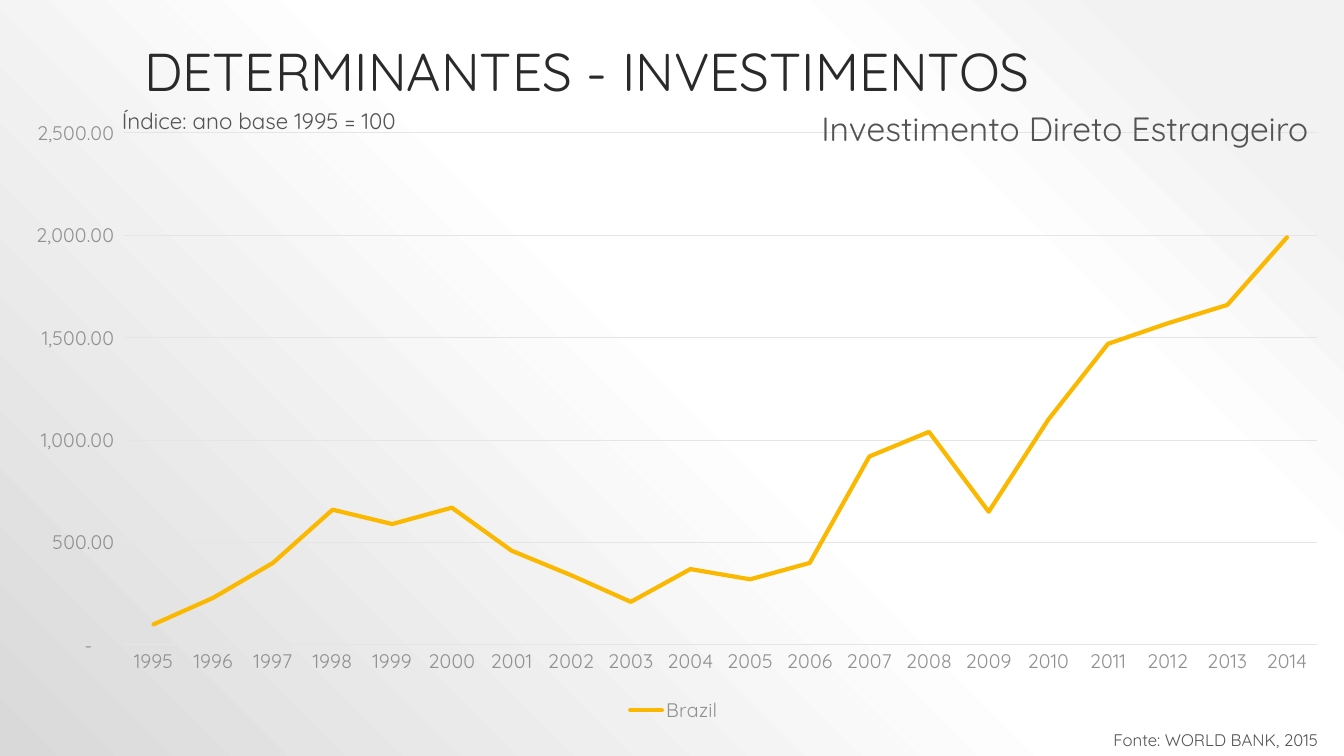
"""Builds the slide on foreign direct investment in Brazil."""
from lxml.etree import SubElement
from pptx import Presentation
from pptx.chart.data import CategoryChartData
from pptx.dml.color import RGBColor
from pptx.enum.chart import XL_CHART_TYPE, XL_LEGEND_POSITION, XL_MARKER_STYLE, XL_TICK_MARK
from pptx.enum.text import MSO_ANCHOR, MSO_AUTO_SIZE, PP_ALIGN
from pptx.oxml.ns import qn
from pptx.util import Cm, Pt

INK = RGBColor(0x2A, 0x2A, 0x2A)
TEXT = RGBColor(0x54, 0x54, 0x54)
AXIS = RGBColor(0x90, 0x90, 0x90)
GRID = RGBColor(0xE5, 0xE5, 0xE5)
GOLD = RGBColor(0xFA, 0xB9, 0x00)
PALE = RGBColor(0xF2, 0xF2, 0xF2)
WHITE = RGBColor(0xFF, 0xFF, 0xFF)
SILVER = RGBColor(0xD9, 0xD9, 0xD9)

FIRST_YEAR = 1995
INVESTMENT = [100, 230, 400, 660, 590, 670, 460, 340, 210, 370,
              320, 400, 920, 1040, 650, 1100, 1470, 1570, 1660, 1990]
NUMBER_FORMAT = r'_(* #,##0.00_);_(* \(#,##0.00\);_(* "-"??_);_(@_)'


class SlideBuilder:
    FONT = "Quicksand"

    def __init__(self, slide):
        self.slide = slide

    def style(self, font, size, color):
        font.name = self.FONT
        font.size = Pt(size)
        font.color.rgb = color

    def background(self, stops):
        self.slide.background.fill.gradient()
        gradient = self.slide.element.find(".//" + qn("a:gradFill"))
        for child in list(gradient):
            gradient.remove(child)
        stop_list = SubElement(gradient, qn("a:gsLst"))
        for position, color in stops:
            stop = SubElement(stop_list, qn("a:gs"), pos=str(position * 1000))
            SubElement(stop, qn("a:srgbClr"), val=str(color))
        circle = SubElement(gradient, qn("a:path"), path="circle")
        SubElement(circle, qn("a:fillToRect"), l="100000", b="100000")

    def fill_text(self, frame, text, size, color):
        frame.text = text
        paragraph = frame.paragraphs[0]
        paragraph.alignment = PP_ALIGN.LEFT
        paragraph.line_spacing = 0.9
        self.style(paragraph.font, size, color)

    def title(self, text, left, top, width, height):
        title = self.slide.shapes.title
        title.left, title.top, title.width, title.height = left, top, width, height
        frame = title.text_frame
        frame.auto_size = MSO_AUTO_SIZE.NONE
        frame.vertical_anchor = MSO_ANCHOR.BOTTOM
        self.fill_text(frame, text, 38, INK)

    def label(self, text, size, left, top, width, height, wrap=False):
        frame = self.slide.shapes.add_textbox(left, top, width, height).text_frame
        frame.word_wrap = wrap
        frame.auto_size = MSO_AUTO_SIZE.SHAPE_TO_FIT_TEXT
        self.fill_text(frame, text, size, TEXT)

    def axis(self, axis):
        axis.major_tick_mark = axis.minor_tick_mark = XL_TICK_MARK.NONE
        self.style(axis.tick_labels.font, 14, AXIS)

    def rule(self, line):
        line.color.rgb = GRID
        line.width = Pt(0.75)

    def line_chart(self, name, categories, values, left, top, width, height):
        data = CategoryChartData(number_format=NUMBER_FORMAT)
        data.categories = categories
        data.add_series(name, values)
        frame = self.slide.shapes.add_chart(
            XL_CHART_TYPE.LINE, left, top, width, height, data)
        self.slide.shapes.title.element.addprevious(frame.element)
        chart = frame.chart
        chart.has_title = False
        self.style(chart.font, 14, TEXT)
        chart.has_legend = True
        chart.legend.position = XL_LEGEND_POSITION.BOTTOM
        chart.legend.include_in_layout = False
        self.style(chart.legend.font, 14, AXIS)

        years, index = chart.category_axis, chart.value_axis
        self.axis(years)
        self.rule(years.format.line)
        self.axis(index)
        index.minimum_scale, index.maximum_scale, index.major_unit = 0, 2500, 500
        index.format.line.fill.background()
        self.rule(index.major_gridlines.format.line)
        index.tick_labels.number_format = NUMBER_FORMAT
        index.tick_labels.number_format_is_linked = False

        plot = chart.plots[0]
        plot.vary_by_categories = False
        series = plot.series[0]
        series.smooth = False
        series.marker.style = XL_MARKER_STYLE.NONE
        series.format.line.color.rgb = GOLD
        series.format.line.width = Pt(3)
        series._element.find(".//" + qn("a:ln")).set("cap", "rnd")


def main():
    deck = Presentation()
    deck.slide_width, deck.slide_height = Cm(33.87), Cm(19.05)
    builder = SlideBuilder(deck.slides.add_slide(deck.slide_layouts[5]))
    builder.background([(10, PALE), (28, WHITE), (48, WHITE), (100, SILVER)])
    builder.title("DETERMINANTES - INVESTIMENTOS", Cm(3.38), Cm(0.76), Cm(27.1), Cm(1.96))
    years = [str(FIRST_YEAR + offset) for offset in range(len(INVESTMENT))]
    builder.line_chart("Brazil", years, INVESTMENT, Cm(0.1), Cm(2.72), Cm(33.76), Cm(15.6))
    builder.label("Fonte: WORLD BANK, 2015", 12, Cm(27.81), Cm(18.31), Cm(5.92), Cm(0.71))
    builder.label("Investimento Direto Estrangeiro", 24,
                  Cm(20.45), Cm(2.72), Cm(13.28), Cm(1.17))
    builder.label("Índice: ano base 1995 = 100", 16,
                  Cm(2.82), Cm(2.64), Cm(9.3), Cm(0.86), wrap=True)
    deck.save("out.pptx")


if __name__ == "__main__":
    main()
